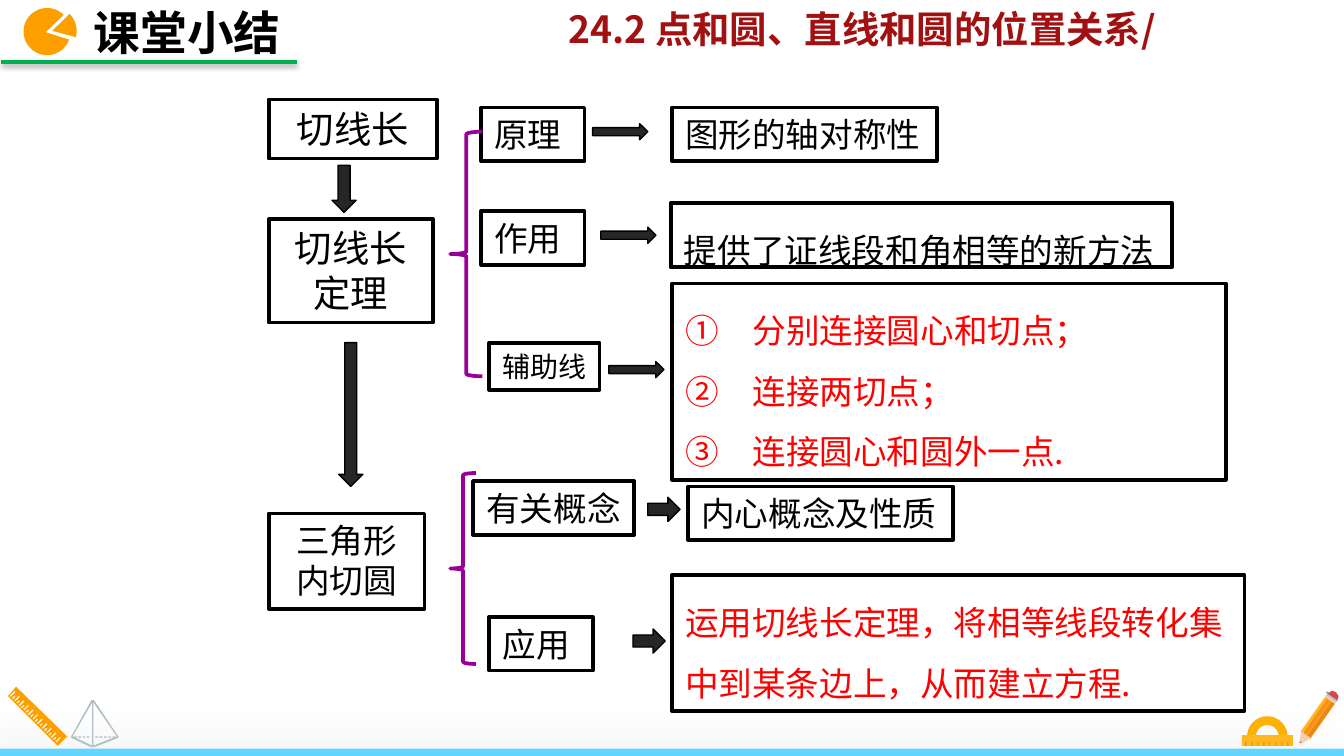
from math import cos, radians, sin

from lxml.etree import SubElement
from pptx import Presentation
from pptx.dml.color import RGBColor
from pptx.enum.shapes import MSO_CONNECTOR, MSO_SHAPE
from pptx.enum.text import MSO_ANCHOR, PP_ALIGN
from pptx.oxml.ns import qn
from pptx.util import Inches, Pt

BLACK = RGBColor(0x00, 0x00, 0x00)
RED = RGBColor(0xFF, 0x00, 0x00)
MAROON = RGBColor(0xA1, 0x11, 0x11)
GREEN = RGBColor(0x00, 0xB0, 0x50)
PURPLE = RGBColor(0x99, 0x00, 0x99)
CHARCOAL = RGBColor(0x26, 0x26, 0x26)
SKY = RGBColor(0x63, 0xD6, 0xFF)
ORANGE = RGBColor(0xFE, 0x9F, 0x00)
AMBER = RGBColor(0xFF, 0xB1, 0x03)
GOLD = RGBColor(0xFF, 0xB7, 0x20)
DARK_ORANGE = RGBColor(0xFB, 0x85, 0x01)
PENCIL_DARK = RGBColor(0xED, 0x85, 0x18)
PENCIL_MID = RGBColor(0xF8, 0x90, 0x19)
LEAD = RGBColor(0xE7, 0x4C, 0x3C)
WOOD = RGBColor(0xF4, 0xCF, 0xB2)
ERASER = RGBColor(0xE2, 0x43, 0x48)
SILVER = RGBColor(0xD1, 0xD3, 0xD4)
GREY = RGBColor(0xBC, 0xBE, 0xC0)
DARK_GREY = RGBColor(0x93, 0x95, 0x98)
BLUE_GREY = RGBColor(0xB0, 0xBE, 0xC5)
FONT = "Noto Sans CJK SC"
LEFT, CENTER, JUSTIFY = PP_ALIGN.LEFT, PP_ALIGN.CENTER, PP_ALIGN.JUSTIFY
RECT = MSO_SHAPE.RECTANGLE

prs = Presentation()
prs.slide_width = Inches(10)
prs.slide_height = prs.slide_width * 9 // 16
COL = prs.slide_width / 100
ROW = prs.slide_height / 56.25
s = prs.slides.add_slide(prs.slide_layouts[6])


def add_shape(kind, x, y, w, h, fill=None, line=None, width=0.75, rotation=0):
    sp = s.shapes.add_shape(kind, int(x * COL), int(y * ROW), int(w * COL), int(h * ROW))
    sp.shadow.inherit = False
    sp.rotation = rotation
    if fill is None:
        sp.fill.background()
    else:
        sp.fill.solid()
        sp.fill.fore_color.rgb = fill
    if line is None:
        sp.line.fill.background()
    else:
        sp.line.color.rgb = line
        sp.line.width = Pt(width)
    return sp


def add_outline(fill, *contours):
    scaled = [[(x * COL, y * ROW) for x, y in c] for c in contours]
    fb = s.shapes.build_freeform(*scaled[0][0], scale=1.0)
    fb.add_line_segments(scaled[0][1:], close=True)
    for c in scaled[1:]:
        fb.move_to(*c[0])
        fb.add_line_segments(c[1:], close=True)
    sp = fb.convert_to_shape()
    sp.shadow.inherit = False
    sp.fill.solid()
    sp.fill.fore_color.rgb = fill
    sp.line.fill.background()


bar = add_shape(RECT, 0, 55.7, 100, 0.6, SKY)

arch_outer, arch_inner, pie_body, pie_slice = [
    [(cx + r * cos(radians(a)), cy + r * sin(radians(a))) for a in range(start, end + 1, 5)]
    for cx, cy, r, start, end in (
        (94.3, 54.8, 1.5, 180, 360),
        (94.3, 54.8, 0.85, 180, 360),
        (3.5, 2.35, 1.75, 20, 315),
        (3.9, 2.3, 1.8, -45, 15),
    )
]

add_outline(AMBER, arch_outer + arch_inner[::-1])
add_shape(RECT, 92.4, 54.7, 3.8, 0.8, GOLD)
for i in range(8):
    add_shape(RECT, 92.65 + 0.45 * i, 55.2, 0.08, 0.3, DARK_ORANGE)

for x, y, w, h, fill in (
    (97.6, 51.8, 0.9, 3.2, GOLD),
    (98.1, 52, 0.3, 3.2, PENCIL_DARK),
    (97.8, 51.8, 0.3, 3.2, PENCIL_MID),
    (98.6, 51.8, 0.9, 0.3, SILVER),
    (98.7, 51.8, 0.9, 0.2, GREY),
    (98.6, 51.7, 0.9, 0.1, DARK_GREY),
):
    add_shape(RECT, x, y, w, h, fill, rotation=35.2)
add_outline(LEAD, [(96.7, 55.1), (96.7, 55.3), (96.9, 55.3), (96.8, 55.2)])
add_outline(ERASER, [(99.4, 51.5), (99.1, 51.4), (98.8, 51.6), (99.5, 52.1), (99.6, 51.8)])
add_outline(WOOD, [(96.7, 55.1), (96.8, 55.2), (96.9, 55.3), (97.5, 54.9), (97.4, 54.8),
                   (97.2, 54.8), (97.2, 54.6), (97, 54.6), (97, 54.4), (96.8, 54.5)])

ticks = []
for i in range(21):
    x, y = 0.72 + 0.17 * i, 51.78 + 0.17 * i
    d = 0.18 if i % 2 else 0.36
    ticks.append([(x, y), (x + d, y - d), (x + d + 0.08, y - d + 0.08), (x + 0.08, y + 0.08)])
add_outline(ORANGE, [(1.2, 51.1), (0.6, 51.8), (4.3, 55.5), (5, 54.8)], *ticks)

for i in (0, 1, 2, 3, 5, 6, 7, 8, 9):
    add_shape(RECT, 5.5 + 0.32 * i, 54.8, 0.2, 0.1, BLUE_GREY)
add_outline(BLUE_GREY,
            [(7, 52.1), (6.8, 52.1), (5.3, 54.8), (5.3, 54.9),
             (6.8, 55.6), (7, 55.6), (8.8, 54.9), (8.8, 54.8)],
            [(8.7, 54.8), (6.9, 55.5), (5.4, 54.8), (6.9, 52.2)])
add_shape(RECT, 6.85, 52.1, 0.1, 3.5, BLUE_GREY)

METHODS = ("分别连接圆心和切点；", "连接两切点；", "连接圆心和圆外一点.")
for x, y, w, h, texts, size, color, align, spacing, wrap in (
    (41.3, 0, 47.2, 4.4, ("24.2 点和圆、直线和圆的位置关系/",), 20, MAROON, LEFT, 1, False),
    (6, -0.2, 16.1, 5.2, ("课堂小结",), 25, BLACK, LEFT, 1, False),
    (20, 7.4, 12.5, 4.4, ("切线长",), 20, BLACK, CENTER, 1, True),
    (20, 16.3, 12.2, 7.7, ("切线长定理",), 20, BLACK, CENTER, 1, True),
    (35.8, 15.7, 7.7, 4, ("作用",), 18, BLACK, JUSTIFY, 1, True),
    (50, 8, 19.7, 4, ("图形的轴对称性",), 18, BLACK, LEFT, 1, False),
    (35.8, 8, 7.7, 4, ("原理",), 18, BLACK, JUSTIFY, 1, True),
    (49.9, 15.1, 37.3, 4.8, ("提供了证线段和角相等的新方法",), 18, BLACK, LEFT, 1.5, True),
    (36.4, 25.5, 8.2, 3.5, ("辅助线",), 15, BLACK, LEFT, 1, False),
    (50, 21.1, 41.2, 14.6, METHODS, 18, RED, LEFT, 1.5, True),
    (20, 38.2, 11.6, 7.1, ("三角形内切圆",), 18, BLACK, CENTER, 1, True),
    (50, 42.8, 42.6, 10.1, ("运用切线长定理，将相等线段转化集中到某条边上，从而建立方程.",),
     18, RED, LEFT, 1.5, True),
    (35.2, 35.8, 12, 4, ("有关概念",), 18, BLACK, LEFT, 1, False),
    (51.2, 36.2, 19.7, 4, ("内心概念及性质",), 18, BLACK, LEFT, 1, False),
    (36.4, 45.9, 7.7, 4, ("应用",), 18, BLACK, JUSTIFY, 1, True),
):
    heading = y < 5
    if heading:
        sp = s.shapes.add_textbox(int(x * COL), int(y * ROW), int(w * COL), int(h * ROW))
    else:
        sp = add_shape(RECT, x, y, w, h, line=BLACK, width=2)
    tf = sp.text_frame
    tf.word_wrap = wrap
    tf.vertical_anchor = MSO_ANCHOR.TOP
    for i, text in enumerate(texts):
        p = tf.paragraphs[0] if i == 0 else tf.add_paragraph()
        p.alignment = align
        p.line_spacing = Pt(size * 1.2 * spacing)
        if len(texts) > 1:
            pPr = p._p.get_or_add_pPr()
            pPr.set("marL", str(int(5 * COL)))
            pPr.set("indent", str(int(-5 * COL)))
            SubElement(pPr, qn("a:buAutoNum"), type="circleNumDbPlain")
        r = p.add_run()
        r.text = text
        r.font.size = Pt(size)
        r.font.bold = heading
        r.font.color.rgb = color
        r.font.name = FONT
        SubElement(r._r.get_or_add_rPr(), qn("a:ea"), typeface=FONT)

for kind, x, y, w, h in (
    (MSO_SHAPE.DOWN_ARROW, 24.7, 12.3, 1.8, 3.5),
    (MSO_SHAPE.DOWN_ARROW, 25.2, 25.5, 1.8, 10.7),
    (MSO_SHAPE.RIGHT_ARROW, 44.1, 9.2, 4.1, 1.2),
    (MSO_SHAPE.RIGHT_ARROW, 44.7, 16.9, 4.1, 1.2),
    (MSO_SHAPE.RIGHT_ARROW, 45.3, 26.9, 4.1, 1.2),
    (MSO_SHAPE.RIGHT_ARROW, 48.2, 37, 2.4, 1.8),
    (MSO_SHAPE.RIGHT_ARROW, 47.1, 46.8, 2.4, 1.8),
):
    add_shape(kind, x, y, w, h, CHARCOAL, BLACK)

for y, w, h in ((9.8, 2.4, 18.2), (35.2, 1.9, 14.2)):
    brace = add_shape(MSO_SHAPE.LEFT_BRACE, 33.5, y, w, h, line=PURPLE, width=2)
    brace.adjustments[0] = 0.08

rule = s.shapes.add_connector(MSO_CONNECTOR.STRAIGHT, int(0.1 * COL), int(4.6 * ROW),
                              int(22.1 * COL), int(4.6 * ROW))
rule.line.color.rgb = GREEN
rule.line.width = Pt(2)
SubElement(rule._element.spPr, qn("a:effectLst"))

for sp, alpha, blur, dist, angle in ((bar, 50, 35, 20, 135), (rule, 38, 3.1, 1.6, 90)):
    effects = sp._element.spPr.find(qn("a:effectLst"))
    shadow = SubElement(effects, qn("a:outerShdw"), blurRad=str(Pt(blur)),
                        dist=str(Pt(dist)), dir=str(angle * 60000), rotWithShape="0")
    tint = SubElement(shadow, qn("a:srgbClr"), val=str(BLACK))
    SubElement(tint, qn("a:alpha"), val=str(alpha * 1000))

add_outline(ORANGE, pie_body + [(3.4, 2.4)], pie_slice + [(3.9, 2.3)])

prs.save("out.pptx")
